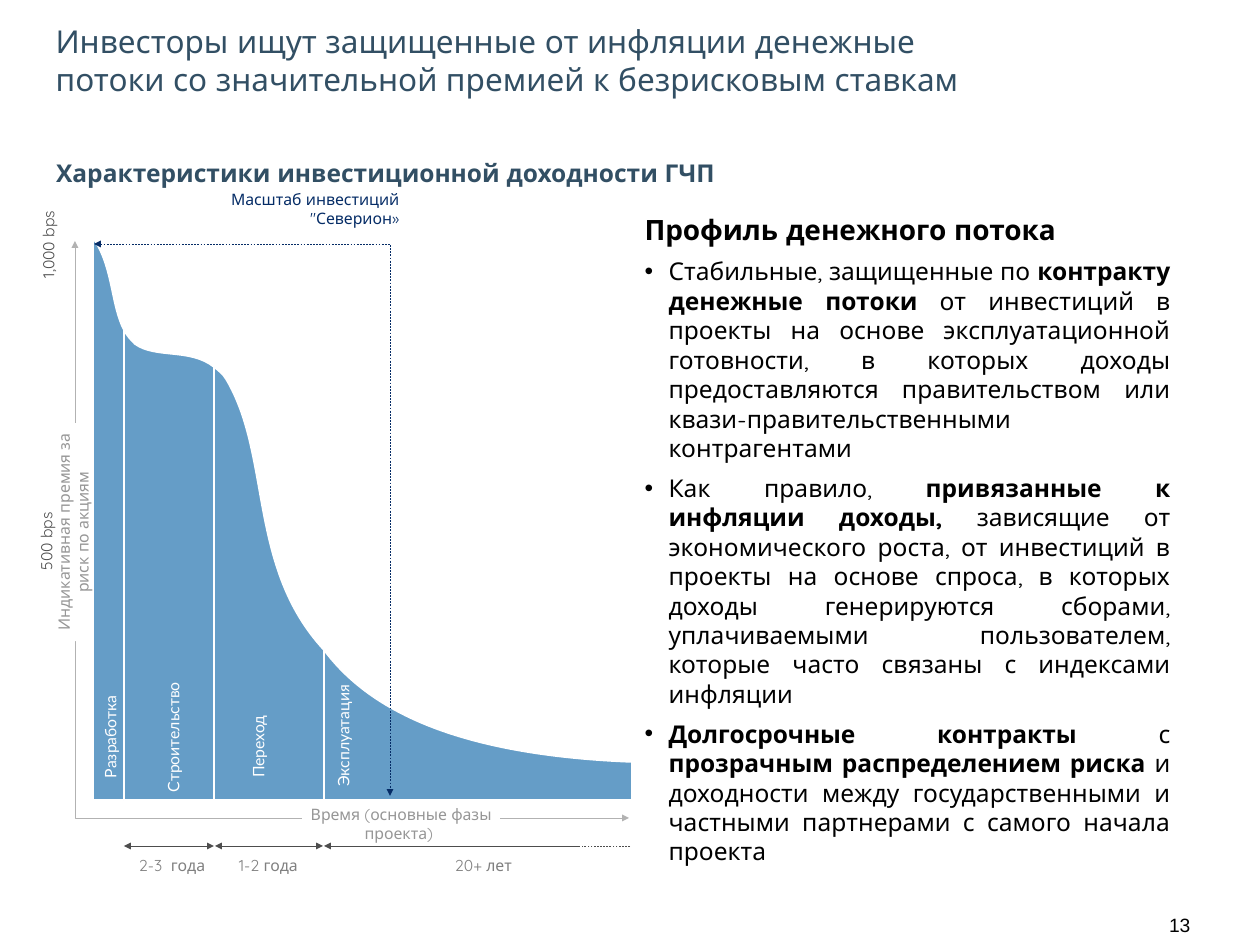
from dataclasses import dataclass

import lxml.etree
import pptx
import pptx.dml.color
import pptx.enum.dml
import pptx.enum.shapes
import pptx.enum.text
import pptx.oxml.ns
import pptx.util

PX = 914400 / 126
ALIGN = pptx.enum.text.PP_ALIGN
qn = pptx.oxml.ns.qn


@dataclass(frozen=True)
class Theme:
    font: str = "Quicksand"
    phase_font: str = "Lato"
    number_font: str = "Arial"
    heading: str = "324F64"
    text: str = "000000"
    area: str = "659DC7"
    white: str = "FFFFFF"
    axis: str = "B2B2B2"
    axis_text: str = "969696"
    duration_text: str = "808080"
    dark: str = "4D4D4D"
    scope: str = "052C66"
    title_size: int = 18
    body_heading_size: int = 16
    body_size: int = 14
    number_size: int = 11
    label_size: int = 9
    area_line: float = 1
    thin_line: float = 0.25


THEME = Theme()
BASELINE = 800

# Top edge of each phase: start point, then cubic curves (control, control, end)
PHASES = [
    [(93, 238), (113, 266), (111, 306), (124, 330)],
    [(124, 330), (127, 336), (131, 340), (135, 344), (156, 359), (190, 348), (214, 367)],
    [(214, 367), (218, 370), (223, 374), (226, 379), (272, 456), (247, 567), (324, 650)],
    [(324, 650), (368, 709), (454, 755), (632, 762)],
]

# Text, centre x, centre y, width
PHASE_LABELS = [
    ("Разработка", 110, 735, 86),
    ("Строительство", 173, 736, 112),
    ("Переход", 258, 744, 68),
    ("Эксплуатация", 343, 735, 103),
]

# Text, left, width
DURATIONS = [("2-3  года", 139, 68), ("1-2 года", 239, 64), ("20+ лет", 455, 57)]

# Each paragraph is a list of (text, bold)
BULLETS = [
    [("Стабильные, защищенные по ", False), ("контракту денежные потоки", True),
     (" от инвестиций в проекты на основе эксплуатационной готовности, в которых доходы "
      "предоставляются правительством или квази-правительственными контрагентами", False)],
    [("Как правило, ", False), ("привязанные к инфляции доходы, ", True),
     ("зависящие от экономического роста, от инвестиций в проекты на основе спроса, в которых "
      "доходы генерируются сборами, уплачиваемыми пользователем, которые часто связаны с "
      "индексами инфляции", False)],
    [("Долгосрочные контракты ", True), ("с ", False),
     ("прозрачным распределением риска ", True),
     ("и доходности между государственными и частными партнерами с самого начала проекта",
      False)],
]


def px(value):
    return pptx.util.Emu(round(value * PX))


def rgb(color):
    return pptx.dml.color.RGBColor.from_string(color)


def place(shape, left, top, width, height):
    shape.left, shape.top, shape.width, shape.height = map(px, (left, top, width, height))


def add_run(paragraph, text, size, color, bold=False, font=THEME.font):
    run = paragraph.add_run()
    run.text = text
    run.font.name, run.font.size, run.font.bold = font, pptx.util.Pt(size), bold
    run.font.color.rgb = rgb(color)


def add_label(slide, text, box, color, size=THEME.label_size, align=ALIGN.LEFT, bold=False,
              font=THEME.font, wrap=False, rotation=0, fill=None):
    shape = slide.shapes.add_textbox(*map(px, box))
    shape.rotation = rotation
    if fill:
        shape.fill.solid()
        shape.fill.fore_color.rgb = rgb(fill)
    frame = shape.text_frame
    frame.word_wrap = wrap
    frame.margin_left = frame.margin_top = frame.margin_right = frame.margin_bottom = 0
    paragraph = frame.paragraphs[0]
    paragraph.alignment = align
    add_run(paragraph, text, size, color, bold, font)


def add_vertical_label(slide, text, center_x, center_y, width, color, height=19, **options):
    box = (center_x - width / 2, center_y - height / 2, width, height)
    add_label(slide, text, box, color, rotation=270, **options)


def style_line(shape, color, width, head=False, tail=False, dashed=False):
    shape.line.color.rgb = rgb(color)
    shape.line.width = pptx.util.Pt(width)
    if dashed:
        shape.line.dash_style = pptx.enum.dml.MSO_LINE.DASH
    line = shape.element.spPr.find(qn("a:ln"))
    for wanted, tag in ((head, "a:headEnd"), (tail, "a:tailEnd")):
        if wanted:
            lxml.etree.SubElement(line, qn(tag), type="triangle", w="sm", len="sm")


def add_path(slide, points, close):
    points = [(px(x), px(y)) for x, y in points]
    builder = slide.shapes.build_freeform(*points[0])
    builder.add_line_segments(points[1:], close=close)
    shape = builder.convert_to_shape()
    shape.shadow.inherit = False
    return shape


def bend_segments(shape, count):
    """Turn the first count line segments into cubic curves, three points each."""
    segments = list(shape.element.iter(qn("a:lnTo")))[:count]
    for start in range(0, count, 3):
        curve = lxml.etree.Element(qn("a:cubicBezTo"))
        segments[start].addprevious(curve)
        for segment in segments[start:start + 3]:
            curve.append(segment[0])
            segment.getparent().remove(segment)


def add_phase(slide, knots):
    outline = knots + [(knots[-1][0], BASELINE), (knots[0][0], BASELINE)]
    shape = add_path(slide, outline, True)
    bend_segments(shape, len(knots) - 1)
    shape.fill.solid()
    shape.fill.fore_color.rgb = rgb(THEME.area)
    style_line(shape, THEME.white, THEME.area_line)


def add_arrow_path(slide, points, color, dashed=False):
    shape = add_path(slide, points, False)
    shape.fill.background()
    style_line(shape, color, THEME.thin_line, True, True, dashed)


def add_span(slide, start, end, y, **options):
    connector = slide.shapes.add_connector(
        pptx.enum.shapes.MSO_CONNECTOR.STRAIGHT, px(start), px(y), px(end), px(y))
    style_line(connector, THEME.dark, THEME.thin_line, **options)
    lxml.etree.SubElement(connector.element.spPr, qn("a:effectLst"))


def fill_title(title):
    place(title, 43, 16, 983, 89)
    frame = title.text_frame
    frame.word_wrap = True
    frame.auto_size = pptx.enum.text.MSO_AUTO_SIZE.NONE
    frame.vertical_anchor = pptx.enum.text.MSO_ANCHOR.TOP
    paragraph = frame.paragraphs[0]
    paragraph.alignment = ALIGN.LEFT
    add_run(paragraph, "Инвесторы ищут защищенные от инфляции денежные потоки "
            "со значительной премией к безрисковым ставкам", THEME.title_size, THEME.heading)


def format_body_paragraph(paragraph, bullet):
    paragraph.alignment = ALIGN.JUSTIFY
    paragraph.space_before = pptx.util.Pt(6)
    properties = paragraph._p.get_or_add_pPr()
    properties.set("marL", str(px(24)))
    properties.set("indent", str(px(-24)))
    if bullet:
        color = lxml.etree.SubElement(properties, qn("a:buClr"))
        lxml.etree.SubElement(color, qn("a:srgbClr"), val=THEME.text)
        lxml.etree.SubElement(properties, qn("a:buFont"), typeface=THEME.number_font)
        lxml.etree.SubElement(properties, qn("a:buChar"), char="•")
    else:
        lxml.etree.SubElement(properties, qn("a:buNone"))


def fill_body(body):
    place(body, 632, 206, 551, 712)
    frame = body.text_frame
    frame.word_wrap = True
    frame.auto_size = pptx.enum.text.MSO_AUTO_SIZE.NONE
    heading = frame.paragraphs[0]
    format_body_paragraph(heading, False)
    add_run(heading, "Профиль денежного потока", THEME.body_heading_size, THEME.text, True)
    for runs in BULLETS:
        paragraph = frame.add_paragraph()
        format_body_paragraph(paragraph, True)
        for text, bold in runs:
            add_run(paragraph, text, THEME.body_size, THEME.text, bold)


def add_return_diagram(slide):
    # Phases under the curve
    for knots in PHASES:
        add_phase(slide, knots)

    # Axes and their labels
    add_arrow_path(slide, [(75, 241), (75, 818), (629, 818)], THEME.axis)
    add_label(slide, "Время (основные фазы проекта) ", (302, 805, 198, 38), THEME.axis_text,
              align=ALIGN.CENTER, wrap=True, fill=THEME.white)
    add_vertical_label(slide, "Индикативная премия за риск по акциям", 73, 532, 218,
                       THEME.axis_text, height=38, align=ALIGN.CENTER, wrap=True,
                       fill=THEME.white)
    for text, x, y, width in (("1,000 bps", 48, 247, 72), ("500 bps", 46, 542, 59)):
        add_vertical_label(slide, text, x, y, width, THEME.dark, align=ALIGN.RIGHT,
                           fill=THEME.white)
    for text, x, y, width in PHASE_LABELS:
        add_vertical_label(slide, text, x, y, width, THEME.white, font=THEME.phase_font)

    # Phase durations
    for start, end in ((124, 214), (215, 323)):
        add_span(slide, start, end, 846, head=True, tail=True)
    add_span(slide, 324, 580, 846, head=True)
    add_span(slide, 630, 582, 846, dashed=True)
    for text, left, width in DURATIONS:
        add_label(slide, text, (left, 856, width, 19), THEME.duration_text)

    # Investment scope
    add_label(slide, "Масштаб инвестиций \"Северион»", (156, 190, 243, 38), THEME.scope,
              align=ALIGN.RIGHT, wrap=True)
    add_arrow_path(slide, [(94, 244), (390, 244), (390, 796)], THEME.scope, dashed=True)


def main():
    presentation = pptx.Presentation()
    presentation.slide_width, presentation.slide_height = px(1260), px(945)
    slide = presentation.slides.add_slide(presentation.slide_layouts[1])
    fill_title(slide.shapes.title)
    fill_body(slide.placeholders[1])
    add_label(slide, "Характеристики инвестиционной доходности ГЧП", (56, 158, 1153, 30),
              THEME.heading, THEME.body_size, bold=True, wrap=True)
    add_return_diagram(slide)
    add_label(slide, "13", (1169, 913, 46, 22), THEME.text, THEME.number_size,
              font=THEME.number_font)
    presentation.save("out.pptx")


if __name__ == "__main__":
    main()
